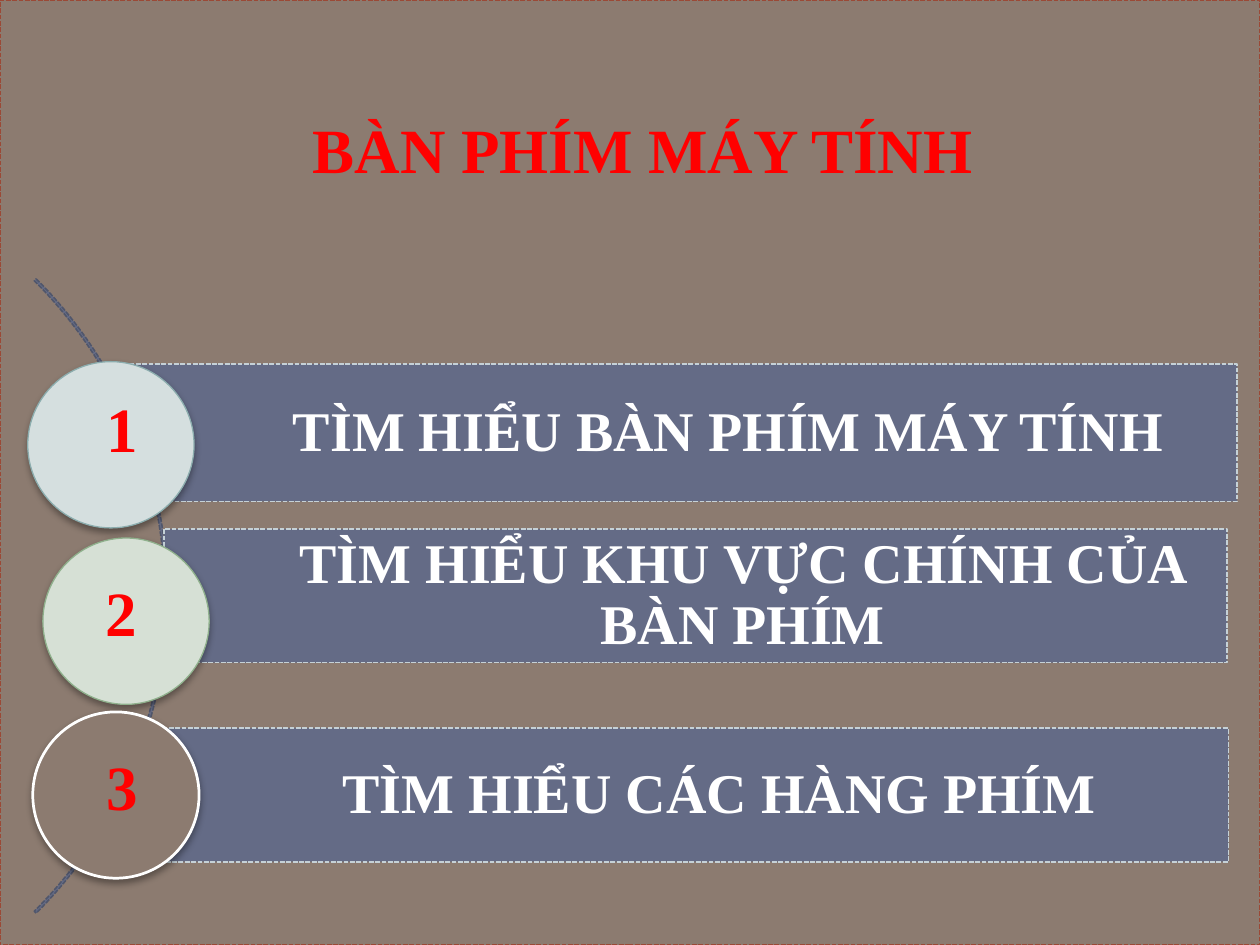
from lxml import etree
from pptx import Presentation
from pptx.dml.color import RGBColor
from pptx.enum.dml import MSO_LINE
from pptx.enum.shapes import MSO_SHAPE
from pptx.enum.text import MSO_ANCHOR, PP_ALIGN
from pptx.oxml.ns import qn
from pptx.util import Inches, Pt

RECT, OVAL, ARC = MSO_SHAPE.RECTANGLE, MSO_SHAPE.OVAL, MSO_SHAPE.BLOCK_ARC
DASH = MSO_LINE.SQUARE_DOT
MID = MSO_ANCHOR.MIDDLE
LEFT, MIDDLE = PP_ALIGN.LEFT, PP_ALIGN.CENTER

BROWN = RGBColor(0x8C, 0x7B, 0x70)
RUST = RGBColor(0x9B, 0x49, 0x36)
SLATE = RGBColor(0x50, 0x56, 0x6B)
BLUE = RGBColor(0x64, 0x6B, 0x86)
PALE = RGBColor(0xC5, 0xD1, 0xD7)
MIST = RGBColor(0xD5, 0xDF, 0xDF)
TEAL = RGBColor(0x8C, 0xAD, 0xAE)
SAGE = RGBColor(0xD6, 0xE0, 0xD5)
GREEN = RGBColor(0x8F, 0xB0, 0x8C)
WHITE = RGBColor(0xFF, 0xFF, 0xFF)
RED = RGBColor(0xFF, 0x00, 0x00)

FONT = "Times New Roman"
DISC = 1.32
ITEMS = [
    ("1", "TÌM HIỂU BÀN PHÍM MÁY TÍNH", (0.99, 2.89, 8.83, 1.09),
     (0.22, 2.87), (0.75, 3.04, 0.5, 0.71), MIST, TEAL, 0.75),
    ("2", "TÌM HIỂU KHU VỰC CHÍNH CỦA BÀN PHÍM", (1.3, 4.2, 8.44, 1.06),
     (0.34, 4.27), (0.74, 4.5, 0.75, 0.71), SAGE, GREEN, 0.75),
    ("3", "TÌM HIỂU CÁC HÀNG PHÍM", (0.92, 5.78, 8.83, 1.06),
     (0.26, 5.65), (0.75, 5.88, 0.5, 0.71), BROWN, WHITE, 1.57),
]


def inch(box):
    return [Inches(v) for v in box]


def draw(slide, kind, box, fill, line, width=0.9, dash=DASH):
    shape = slide.shapes.add_shape(kind, *inch(box))
    shape.shadow.inherit = False
    if fill is None:
        shape.fill.background()
    else:
        shape.fill.solid()
        shape.fill.fore_color.rgb = fill
    shape.line.color.rgb = line
    shape.line.width = Pt(width)
    shape.line.dash_style = dash
    return shape


def write(frame, text, size, color, align):
    frame.text = text
    para = frame.paragraphs[0]
    para.alignment = align
    font = para.runs[0].font
    font.name = FONT
    font.size = Pt(size)
    font.bold = True
    font.color.rgb = color
    return para


def label(slide, box, text, align, wrap):
    frame = slide.shapes.add_textbox(*inch(box)).text_frame
    frame.word_wrap = wrap
    write(frame, text, 36, RED, align)


def shade(shape):
    effects = shape.element.spPr.find(qn("a:effectLst"))
    outer = etree.SubElement(
        effects, qn("a:outerShdw"), blurRad=str(Pt(4)), dist=str(Pt(2)),
        dir="5400000", rotWithShape="0")
    black = etree.SubElement(outer, qn("a:srgbClr"), val="000000")
    etree.SubElement(black, qn("a:alpha"), val="35000")


def bar(slide, box, text):
    frame = draw(slide, RECT, box, BLUE, PALE).text_frame
    frame.word_wrap = True
    frame.vertical_anchor = MID
    frame.margin_left = Inches(0.84)
    frame.margin_right = frame.margin_top = frame.margin_bottom = Inches(0.09)
    para = write(frame, text, 32, WHITE, MIDDLE)
    para.line_spacing = 0.9
    para.space_after = Pt(11)


def agenda(slide, box):
    arc = draw(slide, ARC, box, BLUE, SLATE)
    for spot, value in enumerate((189, 27, 0.003)):
        arc.adjustments[spot] = value
    for num, text, area, spot, place, fill, line, width in ITEMS:
        bar(slide, area, text)
        shade(draw(slide, OVAL, (*spot, DISC, DISC), fill, line, width, None))
        label(slide, place, num, LEFT, True)


def main():
    deck = Presentation()
    deck.slide_width, deck.slide_height = Inches(10), Inches(7.5)
    slide = deck.slides.add_slide(deck.slide_layouts[6])
    draw(slide, RECT, (0, 0, 10, 7.5), BROWN, RUST)
    agenda(slide, (-5.79, 1.17, 7.12, 7.12))
    label(slide, (1.58, 0.83, 7.04, 0.75), "BÀN PHÍM MÁY TÍNH", MIDDLE, False)
    deck.save("out.pptx")


if __name__ == "__main__":
    main()
